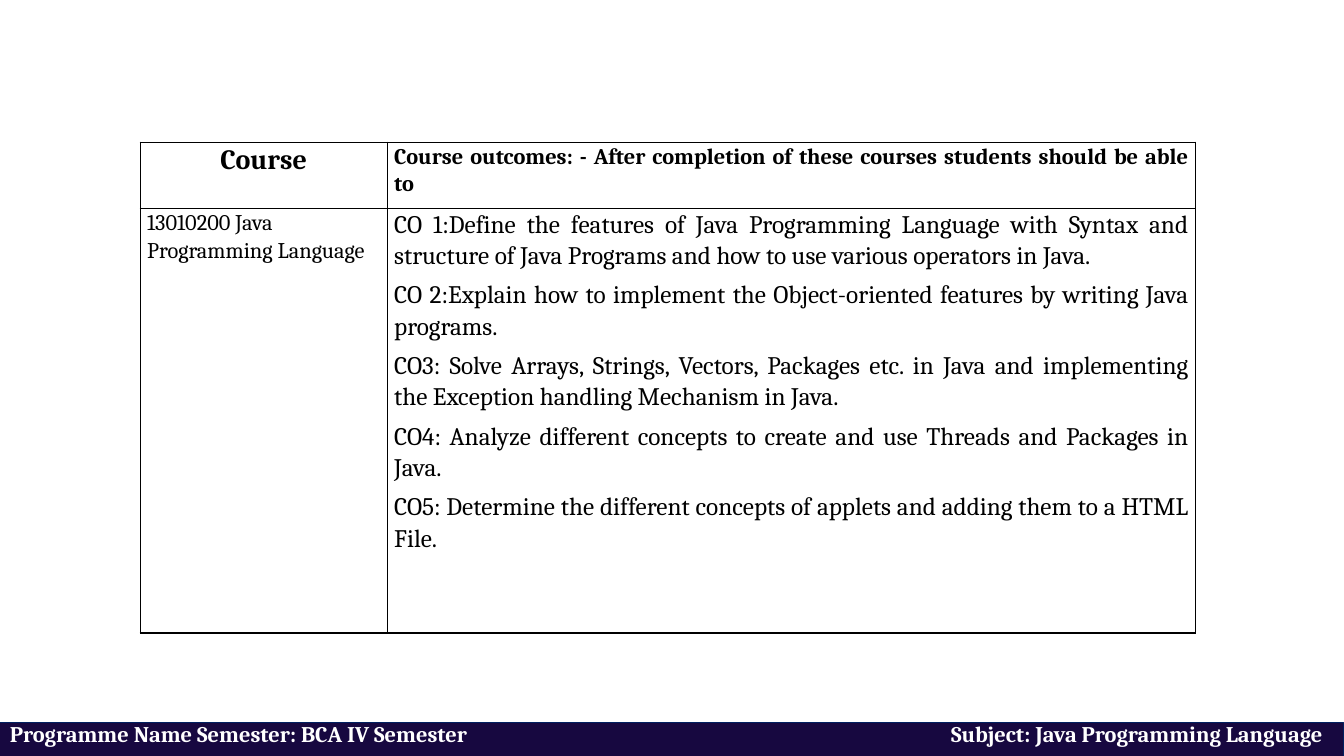
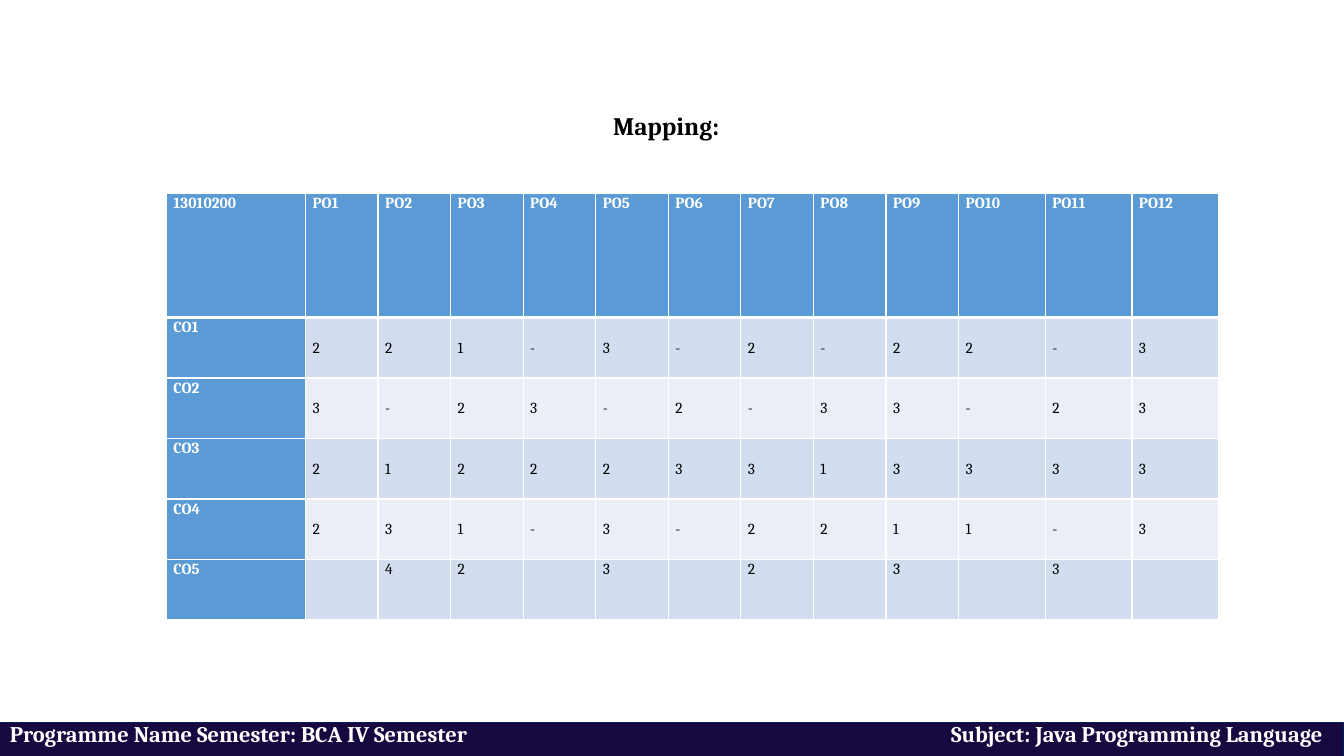
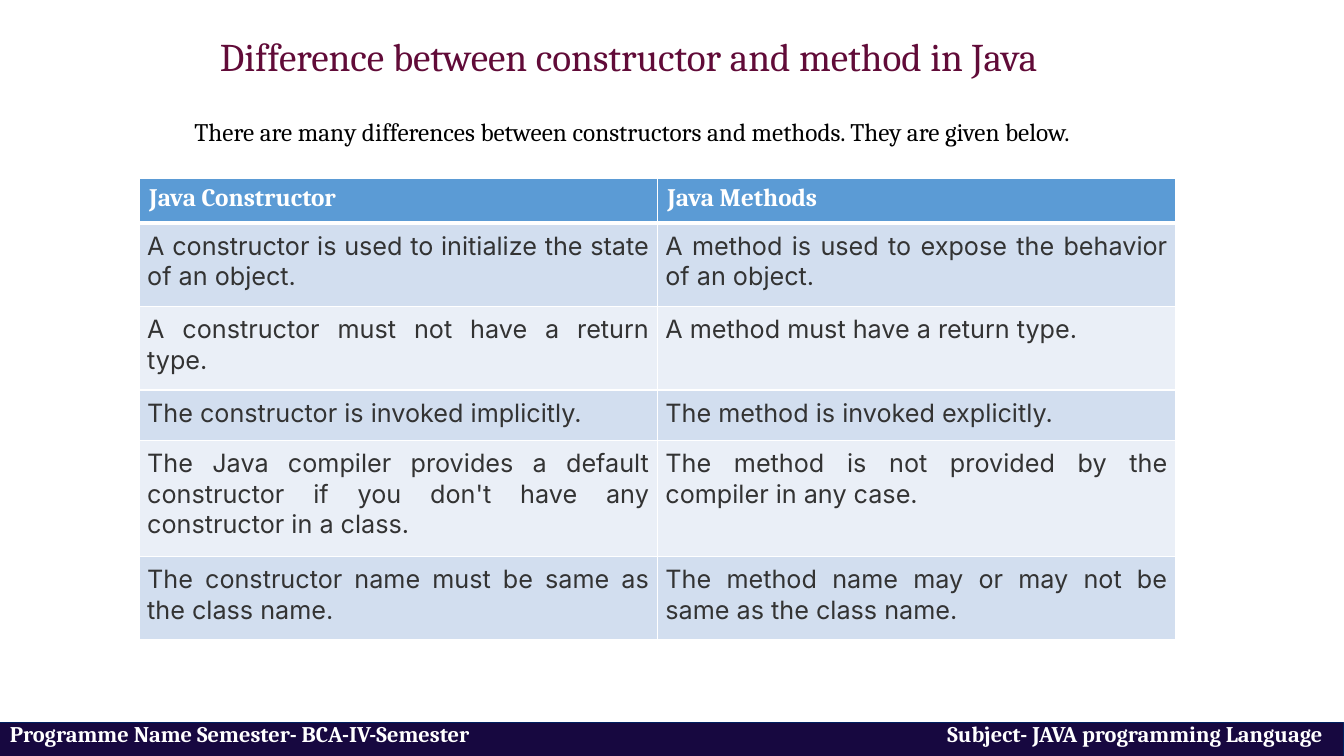
from dataclasses import dataclass, replace

from lxml.etree import SubElement
from pptx import Presentation
from pptx.dml.color import RGBColor
from pptx.enum.shapes import MSO_SHAPE
from pptx.enum.text import MSO_ANCHOR, MSO_AUTO_SIZE, PP_ALIGN
from pptx.oxml.ns import qn
from pptx.slide import Slide
from pptx.table import Table, _Cell
from pptx.text.text import TextFrame
from pptx.util import Inches, Pt

BLACK = RGBColor(0x00, 0x00, 0x00)
WHITE = RGBColor(0xFF, 0xFF, 0xFF)
CHARCOAL = RGBColor(0x33, 0x33, 0x33)
MAROON = RGBColor(0x61, 0x0B, 0x38)
BAND_FILL = RGBColor(0x17, 0x08, 0x40)
BAND_LINE = RGBColor(0x00, 0x20, 0x60)
HEADER_BLUE = RGBColor(0x5B, 0x9B, 0xD5)
ROW_FILLS = (RGBColor(0xD2, 0xDE, 0xEF), RGBColor(0xEA, 0xEF, 0xF7))

SLIDE_WIDTH = 13.33
SLIDE_HEIGHT = 7.5
TITLE_ONLY_LAYOUT = 5
BLANK_LAYOUT = 6
SIDES = ("L", "R", "T", "B")

Box = tuple[float, float, float, float]


@dataclass(frozen=True)
class TextStyle:
    size: float
    color: RGBColor = BLACK
    bold: bool = False
    font: str = "Cambria"
    alignment: PP_ALIGN = PP_ALIGN.LEFT
    line_spacing: float = 1.0
    space_after: float = 0


@dataclass(frozen=True)
class CellStyle:
    text: TextStyle
    fill: RGBColor | None = None
    anchor: MSO_ANCHOR = MSO_ANCHOR.TOP
    margin_x: float = 0.07
    margin_y: float = 0


@dataclass(frozen=True)
class Borders:
    color: RGBColor
    header_bottom: float = 1


BAND_TEXT = TextStyle(16, WHITE, True, line_spacing=0.7)
LABEL_TEXT = TextStyle(18, bold=True)
HEADING_TEXT = TextStyle(28, MAROON, alignment=PP_ALIGN.JUSTIFY)
BLACK_GRID = Borders(BLACK)
WHITE_GRID = Borders(WHITE, header_bottom=3)

OUTCOMES = (
    "CO 1:Define the features of Java Programming Language with Syntax and structure "
    "of Java Programs and how to use various operators in Java.",
    "CO 2:Explain how to implement the Object-oriented features by writing Java programs.",
    "CO3: Solve Arrays, Strings, Vectors, Packages etc. in Java and implementing the "
    "Exception handling Mechanism in Java.",
    "CO4: Analyze different concepts to create and use Threads and Packages in Java.",
    "CO5: Determine the different concepts of applets and adding them to a HTML File.",
)
MAPPING = (
    ("2", "2", "1", "-", "3", "-", "2", "-", "2", "2", "-", "3"),
    ("3", "-", "2", "3", "-", "2", "-", "3", "3", "-", "2", "3"),
    ("2", "1", "2", "2", "2", "3", "3", "1", "3", "3", "3", "3"),
    ("2", "3", "1", "-", "3", "-", "2", "2", "1", "1", "-", "3"),
    ("", "4", "2", "", "3", "", "2", "", "3", "", "3", ""),
)
DIFFERENCES = (
    ("Java Constructor", "Java Methods"),
    ("A constructor is used to initialize the state of an object.",
     "A method is used to expose the behavior of an object."),
    ("A constructor must not have a return type.",
     "A method must have a return type."),
    ("The constructor is invoked implicitly.",
     "The method is invoked explicitly."),
    ("The Java compiler provides a default constructor if you don't have any "
     "constructor in a class.",
     "The method is not provided by the compiler in any case."),
    ("The constructor name must be same as the class name.",
     "The method name may or may not be same as the class name."),
)


def write_text(text_frame: TextFrame, text: str, style: TextStyle) -> None:
    """Fill the frame; each line of the text becomes a paragraph."""
    text_frame.text = text
    for paragraph in text_frame.paragraphs:
        paragraph.alignment = style.alignment
        paragraph.line_spacing = style.line_spacing
        paragraph.space_before = Pt(0)
        paragraph.space_after = Pt(style.space_after)
        for run in paragraph.runs:
            run.font.name = style.font
            run.font.size = Pt(style.size)
            run.font.bold = style.bold
            run.font.color.rgb = style.color


def add_footer_band(slide: Slide, programme: str, subject: str) -> None:
    band = slide.shapes.add_shape(
        MSO_SHAPE.RECTANGLE, 0, Inches(7.17), Inches(SLIDE_WIDTH), Inches(0.34))
    band.shadow.inherit = False
    band.fill.solid()
    band.fill.fore_color.rgb = BAND_FILL
    band.line.color.rgb = BAND_LINE
    band.line.width = Pt(0.75)
    text_frame = band.text_frame
    text_frame.vertical_anchor = MSO_ANCHOR.TOP
    write_text(text_frame, f"{programme}\t{subject}", BAND_TEXT)
    properties = text_frame.paragraphs[0]._p.get_or_add_pPr()
    tabs = SubElement(properties, qn("a:tabLst"))
    SubElement(tabs, qn("a:tab"), pos=str(Inches(13.02)), algn="r")


def set_title(slide: Slide, box: Box, text: str, style: TextStyle) -> None:
    title = slide.shapes.title
    title.left, title.top, title.width, title.height = map(Inches, box)
    title.text_frame.auto_size = MSO_AUTO_SIZE.NONE
    title.text_frame.vertical_anchor = MSO_ANCHOR.MIDDLE
    write_text(title.text_frame, text, style)


def add_table(slide: Slide, left: float, top: float, columns: list[float],
              rows: list[float], borders: Borders) -> Table:
    """Add an unstyled table whose grid lines are all drawn."""
    table = slide.shapes.add_table(
        len(rows), len(columns), Inches(left), Inches(top),
        Inches(sum(columns)), Inches(sum(rows))).table
    table.first_row = table.horz_banding = False
    for column, width in zip(table.columns, columns):
        column.width = Inches(width)
    for row, height in zip(table.rows, rows):
        row.height = Inches(height)
    for row_index, row in enumerate(table.rows):
        for cell in row.cells:
            for side in SIDES:
                under_header = (row_index, side) in ((0, "B"), (1, "T"))
                width = borders.header_bottom if under_header else 1
                add_border(cell, side, borders.color, width)
    return table


def add_border(cell: _Cell, side: str, color: RGBColor, width: float) -> None:
    properties = cell._tc.get_or_add_tcPr()
    line = SubElement(properties, qn(f"a:ln{side}"), w=str(Pt(width)))
    fill = SubElement(line, qn("a:solidFill"))
    SubElement(fill, qn("a:srgbClr"), val=str(color))


def fill_cell(cell: _Cell, text: str, style: CellStyle) -> None:
    if style.fill is None:
        cell.fill.background()
    else:
        cell.fill.solid()
        cell.fill.fore_color.rgb = style.fill
    cell.vertical_anchor = style.anchor
    cell.margin_left = cell.margin_right = Inches(style.margin_x)
    cell.margin_top = cell.margin_bottom = Inches(style.margin_y)
    write_text(cell.text_frame, text, style.text)


def build_outcomes_slide(slide: Slide) -> None:
    table = add_table(slide, 1.39, 1.41, [2.45, 8.02], [0.66, 4.21], BLACK_GRID)
    course = TextStyle(16, line_spacing=1.07, space_after=6)
    justified = replace(course, alignment=PP_ALIGN.JUSTIFY)
    heading = replace(course, size=20, bold=True, alignment=PP_ALIGN.CENTER)
    fill_cell(table.cell(0, 0), "Course", CellStyle(heading))
    fill_cell(table.cell(0, 1),
              "Course outcomes: - After completion of these courses students "
              "should be able to", CellStyle(replace(justified, bold=True)))
    fill_cell(table.cell(1, 0), "13010200 Java Programming Language", CellStyle(course))
    fill_cell(table.cell(1, 1), "\n".join(OUTCOMES),
              CellStyle(replace(justified, size=18)))


def build_mapping_slide(slide: Slide) -> None:
    set_title(slide, (5.98, 1.04, 1.34, 0.4), "Mapping:", LABEL_TEXT)
    columns = [1.38] + [0.72] * 9 + [0.86] * 3
    table = add_table(slide, 1.65, 1.92, columns, [1.23] + [0.6] * 5, WHITE_GRID)
    score = TextStyle(11, alignment=PP_ALIGN.JUSTIFY, line_spacing=1.07)
    header = CellStyle(replace(score, color=WHITE, bold=True), HEADER_BLUE)
    headings = ["13010200"] + [f"PO{number}" for number in range(1, 13)]
    for column, heading in enumerate(headings):
        fill_cell(table.cell(0, column), heading, header)
    for row, scores in enumerate(MAPPING, start=1):
        fill_cell(table.cell(row, 0), f"CO{row}", header)
        anchor = MSO_ANCHOR.TOP if row == len(MAPPING) else MSO_ANCHOR.MIDDLE
        style = CellStyle(score, ROW_FILLS[(row - 1) % 2], anchor)
        for column, value in enumerate(scores, start=1):
            fill_cell(table.cell(row, column), value, style)


def build_differences_slide(slide: Slide) -> None:
    set_title(slide, (2.08, 0.27, 8.77, 0.57),
              "Difference between constructor and method in Java", HEADING_TEXT)
    table = add_table(slide, 1.38, 1.77, [5.14] * 2,
                      [0.44, 0.83, 0.83, 0.5, 1.15, 0.83], WHITE_GRID)
    header = CellStyle(replace(LABEL_TEXT, color=WHITE), HEADER_BLUE,
                       margin_x=0.1, margin_y=0.05)
    body_text = TextStyle(18, CHARCOAL, font="Inter", alignment=PP_ALIGN.JUSTIFY)
    for row, texts in enumerate(DIFFERENCES):
        body = CellStyle(body_text, ROW_FILLS[(row - 1) % 2],
                         margin_x=0.08, margin_y=0.08)
        for column, text in enumerate(texts):
            fill_cell(table.cell(row, column), text, body if row else header)
    introduction = slide.shapes.add_textbox(
        Inches(1.83), Inches(1.1), Inches(9.68), Inches(0.4))
    introduction.text_frame.word_wrap = True
    write_text(introduction.text_frame,
               "There are many differences between constructors and methods. "
               "They are given below.", TextStyle(18))


def main() -> None:
    presentation = Presentation()
    presentation.slide_width = Inches(SLIDE_WIDTH)
    presentation.slide_height = Inches(SLIDE_HEIGHT)
    course_footer = ("Programme Name Semester: BCA IV Semester",
                     "Subject: Java Programming Language")
    lesson_footer = ("Programme Name Semester- BCA-IV-Semester",
                     "Subject- JAVA programming Language")
    pages = (
        (BLANK_LAYOUT, build_outcomes_slide, course_footer),
        (TITLE_ONLY_LAYOUT, build_mapping_slide, course_footer),
        (TITLE_ONLY_LAYOUT, build_differences_slide, lesson_footer),
    )
    for layout, build, footer in pages:
        slide = presentation.slides.add_slide(presentation.slide_layouts[layout])
        add_footer_band(slide, *footer)
        build(slide)
    presentation.save("out.pptx")


if __name__ == "__main__":
    main()
